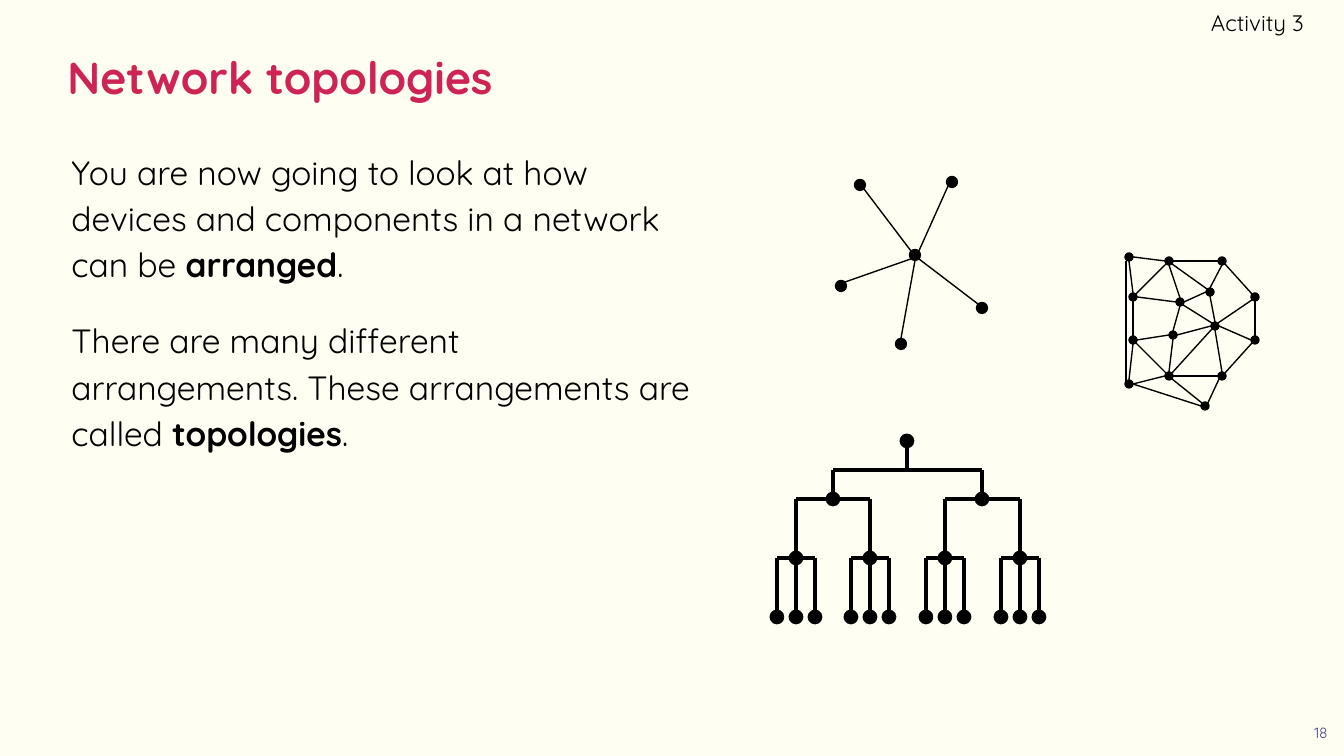
import math
import pptx
import pptx.util
import pptx.dml.color
import pptx.enum.shapes
import pptx.enum.text
import pptx.oxml
import pptx.oxml.ns
import lxml.etree

PX = 914400 / 134.4
FONT = "Quicksand"
CREAM = pptx.dml.color.RGBColor(0xFF, 0xFE, 0xF2)
CRIMSON = pptx.dml.color.RGBColor(0xCD, 0x23, 0x55)
BLACK = pptx.dml.color.RGBColor(0, 0, 0)
INDIGO = pptx.dml.color.RGBColor(0x49, 0x49, 0x85)
ALIGN = pptx.enum.text.PP_ALIGN
ANCHOR = pptx.enum.text.MSO_ANCHOR

HEADING = "Network topologies"
PARAGRAPHS = [
    [("You are now going to look at how devices and components in a network can be ", False),
     ("arranged", True), (".", False)],
    [("There are many different arrangements. These arrangements are called ", False),
     ("topologies", True), (".", False)],
]
ACTIVITY = "Activity 3"
PAGE_NUMBER = "18"

STAR_NODES = {
    "hub": (915, 255), "a": (860, 185), "b": (952, 182),
    "c": (982, 308), "d": (901, 344), "e": (841, 286),
}
STAR_LINKS = [("hub", leaf) for leaf in "abcde"]

MESH_NODES = {
    "a": (1133, 297), "b": (1169, 261), "c": (1222, 261), "d": (1255, 297),
    "e": (1133, 340), "f": (1255, 340), "g": (1169, 376), "h": (1222, 376),
    "i": (1129, 257), "j": (1180, 302), "k": (1173, 335), "l": (1215, 326),
    "m": (1210, 292), "n": (1205, 406), "o": (1129, 384),
}
MESH_LINKS = ("bc cd df fh hg ge ea ab ia ib eo og on gn hn kg ke jk aj bj "
              "bm mc jm kl jl ml ld lf lh lg").split()
MESH_SIDE = ((1126, 261), (1126, 382))

ROOT = (907, 441)
TOP_BAR_Y = 470
BRANCH_Y, TWIG_Y, LEAF_Y = 499, 558, 617
TREE = {833: (796, 870), 982: (945, 1020)}
LEAF_GAP = 19
TREE_DOT = 11


def px(length):
    return pptx.util.Emu(round(length * PX))


def place(shape, left, top, width, height):
    shape.left, shape.top = px(left), px(top)
    shape.width, shape.height = px(width), px(height)


def style(paragraph, size, color, align=ALIGN.LEFT):
    paragraph.alignment = align
    for run in paragraph.runs:
        run.font.name = FONT
        run.font.size = pptx.util.Pt(size)
        run.font.color.rgb = color


def frame(shape, anchor):
    text_frame = shape.text_frame
    text_frame.word_wrap = True
    text_frame.auto_size = pptx.enum.text.MSO_AUTO_SIZE.NONE
    text_frame.vertical_anchor = anchor
    for side in ("left", "top", "right", "bottom"):
        setattr(text_frame, "margin_" + side, pptx.util.Inches(0.1))
    return text_frame


def dot(slide, center, size, weight):
    x, y = center
    node = slide.shapes.add_shape(
        pptx.enum.shapes.MSO_SHAPE.OVAL,
        px(x - size / 2), px(y - size / 2), px(size), px(size))
    node.shadow.inherit = False
    node.fill.solid()
    node.fill.fore_color.rgb = BLACK
    node.line.color.rgb = BLACK
    node.line.width = pptx.util.Pt(weight)


def link(slide, start, end, weight):
    line = slide.shapes.add_connector(
        pptx.enum.shapes.MSO_CONNECTOR.STRAIGHT,
        px(start[0]), px(start[1]), px(end[0]), px(end[1]))
    line.line.color.rgb = BLACK
    line.line.width = pptx.util.Pt(weight)
    properties = line._element.spPr
    lxml.etree.SubElement(properties, pptx.oxml.ns.qn("a:effectLst"))


def rim(center, target, radius):
    octant = math.pi / 4
    angle = math.atan2(target[1] - center[1], target[0] - center[0])
    angle = round(angle / octant) * octant
    return center[0] + radius * math.cos(angle), center[1] + radius * math.sin(angle)


def draw_network(slide, nodes, links, size):
    for center in nodes.values():
        dot(slide, center, size, 0.75)
    for first, second in links:
        start, end = nodes[first], nodes[second]
        link(slide, rim(start, end, size / 2), rim(end, start, size / 2), 0.75)


def fan(slide, bar_y, xs, child_y):
    link(slide, (xs[0], bar_y), (xs[-1], bar_y), 2)
    for x in xs:
        link(slide, (x, bar_y), (x, child_y - TREE_DOT / 2), 2)
        dot(slide, (x, child_y), TREE_DOT, 2)


def draw_tree(slide):
    dot(slide, ROOT, TREE_DOT, 2)
    link(slide, (ROOT[0], ROOT[1] + TREE_DOT / 2), (ROOT[0], TOP_BAR_Y), 2)
    fan(slide, TOP_BAR_Y, list(TREE), BRANCH_Y)
    for twigs in TREE.values():
        fan(slide, BRANCH_Y, twigs, TWIG_Y)
        for x in twigs:
            fan(slide, TWIG_Y, (x - LEAF_GAP, x, x + LEAF_GAP), LEAF_Y)


def write_text(slide):
    heading = slide.shapes.title
    place(heading, 54, 26, 896, 102)
    heading_text = frame(heading, ANCHOR.MIDDLE)
    heading_text.text = HEADING
    style(heading_text.paragraphs[0], 24, CRIMSON)
    heading_text.paragraphs[0].runs[0].font.bold = True

    body = slide.placeholders[1]
    place(body, 58, 132, 646, 578)
    body_text = frame(body, ANCHOR.TOP)
    for index, pieces in enumerate(PARAGRAPHS):
        paragraph = body_text.add_paragraph() if index else body_text.paragraphs[0]
        layout = paragraph._p.get_or_add_pPr()
        layout.set("marL", "0")
        layout.set("indent", "0")
        lxml.etree.SubElement(layout, pptx.oxml.ns.qn("a:buNone"))
        paragraph.line_spacing = 1.15
        paragraph.space_before = pptx.util.Pt(16 if index else 0)
        for words, bold in pieces:
            run = paragraph.add_run()
            run.text = words
            run.font.bold = bold
        style(paragraph, 18, BLACK)

    activity = slide.shapes.add_textbox(px(1016), px(0), px(288), px(46))
    activity_text = frame(activity, ANCHOR.MIDDLE)
    activity_text.margin_right = 0
    activity_text.text = ACTIVITY
    style(activity_text.paragraphs[0], 12, BLACK, ALIGN.RIGHT)

    page = slide.shapes.add_textbox(px(1298), px(710), px(46), px(46))
    page_text = frame(page, ANCHOR.TOP)
    page_text.text = PAGE_NUMBER
    style(page_text.paragraphs[0], 8, INDIGO, ALIGN.CENTER)


def main():
    deck = pptx.Presentation()
    deck.slide_width, deck.slide_height = px(1344), px(756)
    slide = deck.slides.add_slide(deck.slide_layouts[1])
    slide.background.fill.solid()
    slide.background.fill.fore_color.rgb = CREAM
    write_text(slide)
    draw_network(slide, STAR_NODES, STAR_LINKS, 11)
    draw_network(slide, MESH_NODES, MESH_LINKS, 8)
    link(slide, *MESH_SIDE, 0.75)
    draw_tree(slide)
    deck.save("out.pptx")


if __name__ == "__main__":
    main()
